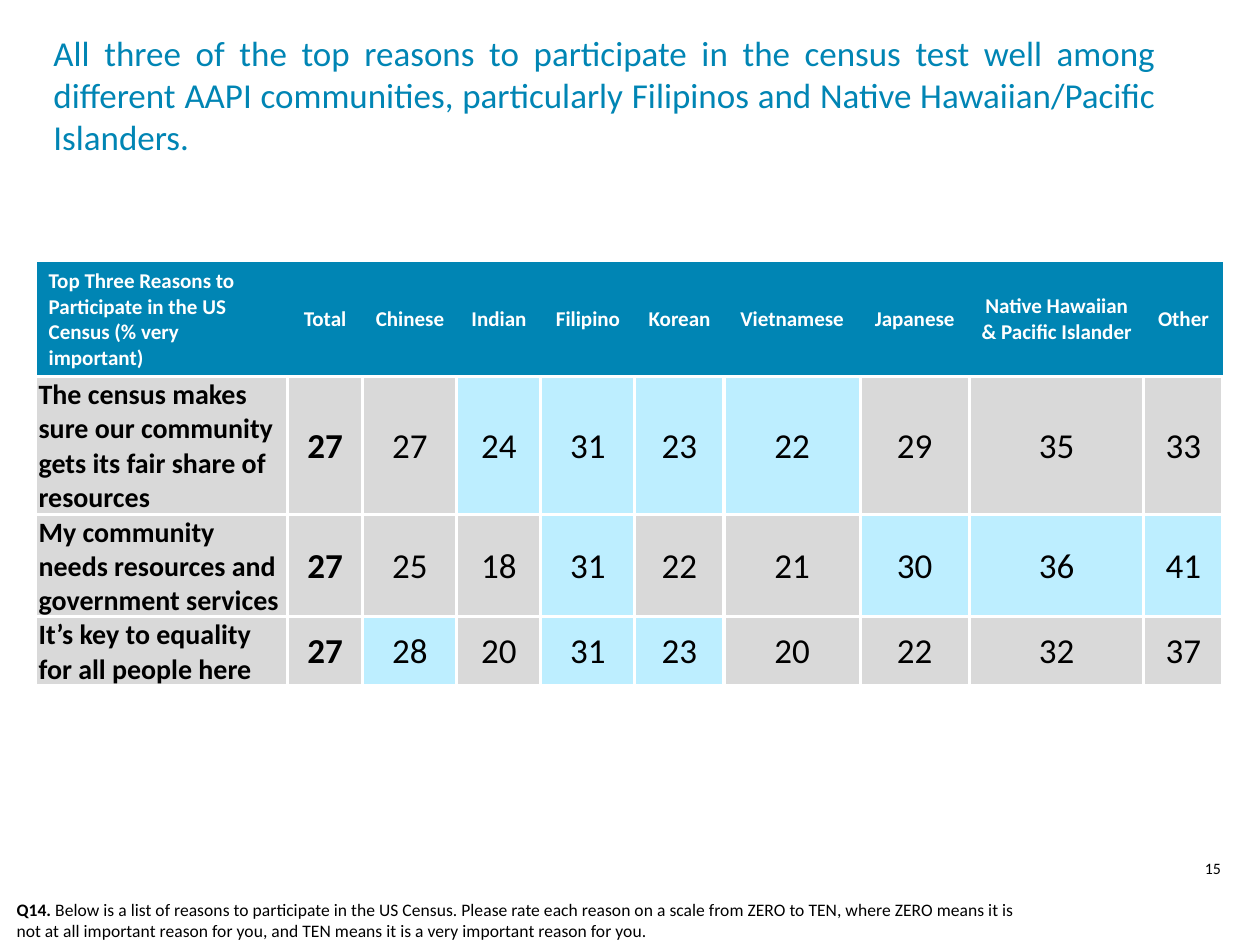
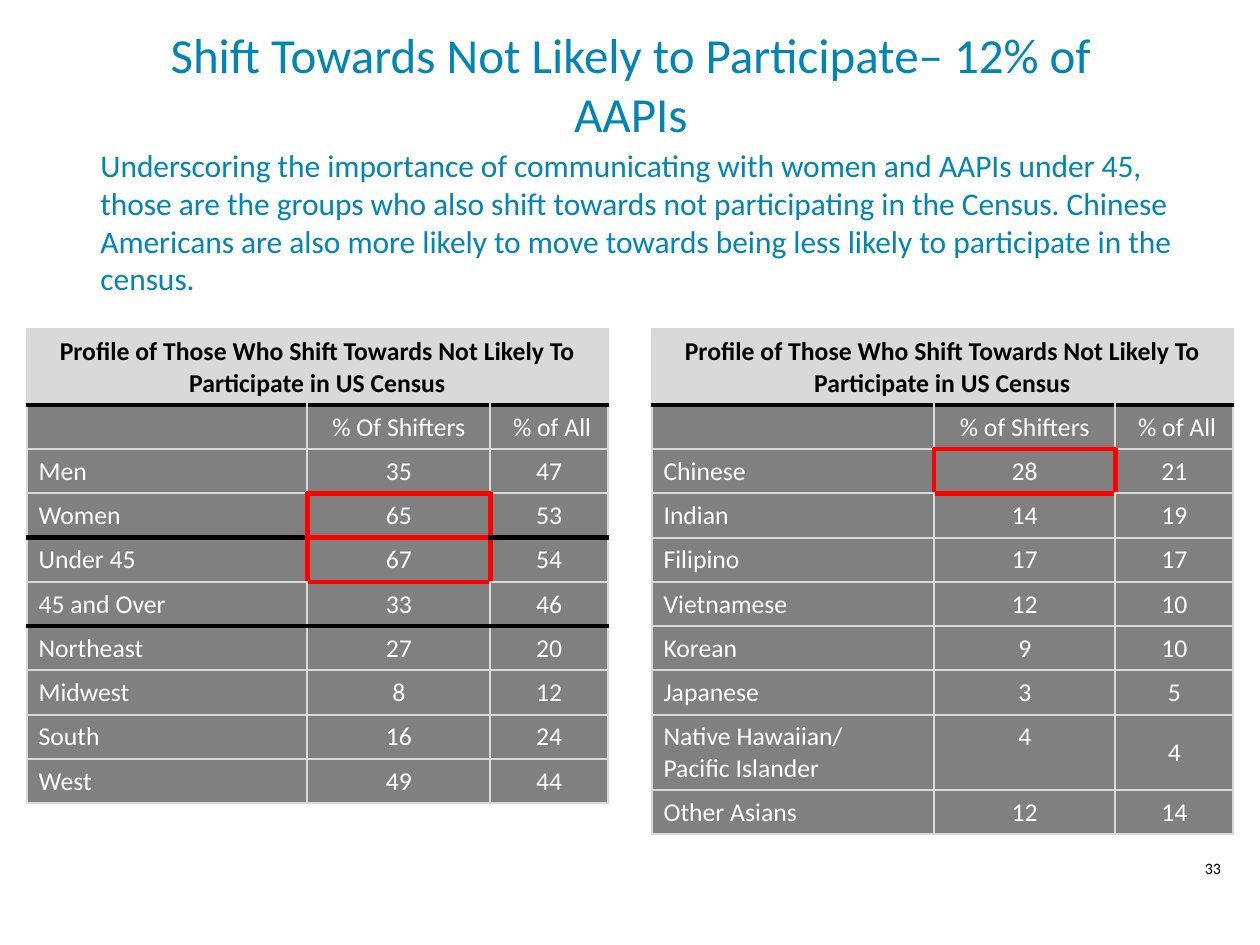
from lxml import etree
from pptx import Presentation
from pptx.dml.color import RGBColor
from pptx.enum.text import MSO_ANCHOR, PP_ALIGN
from pptx.oxml.ns import qn
from pptx.util import Inches, Pt

LEFT, CENTER, JUSTIFY = PP_ALIGN.LEFT, PP_ALIGN.CENTER, PP_ALIGN.JUSTIFY
TOP, MIDDLE, BOTTOM = MSO_ANCHOR.TOP, MSO_ANCHOR.MIDDLE, MSO_ANCHOR.BOTTOM

TEAL = RGBColor(0x00, 0x85, 0xB4)
PALE_BLUE = RGBColor(0xBD, 0xEE, 0xFF)
LIGHT_GRAY = RGBColor(0xD9, 0xD9, 0xD9)
GRAY = RGBColor(0x80, 0x80, 0x80)
RED = RGBColor(0xFF, 0x00, 0x00)
BLACK = RGBColor(0x00, 0x00, 0x00)
WHITE = RGBColor(0xFF, 0xFF, 0xFF)
FONT = "Calibri"

SIDES = {"L": (0, -1), "R": (0, 1), "T": (-1, 0), "B": (1, 0)}
WIDE_INSETS = (0.07, 0.04, 0.07, 0.04)
TIGHT_INSETS = (0.01, 0.01, 0.01, 0)

REASON_HEADS = ["Top Three Reasons to Participate in the US Census (% very important)",
                "Total", "Chinese", "Indian", "Filipino", "Korean", "Vietnamese",
                "Japanese", "Native Hawaiian & Pacific Islander", "Other"]
REASON_COLS = [1.49, 0.45, 0.56, 0.5, 0.56, 0.53, 0.81, 0.65, 1.04, 0.47]
REASONS = [
    ("The census makes sure our community gets its fair share of resources",
     [27, 27, 24, 31, 23, 22, 29, 35, 33], {3, 4, 5, 6}),
    ("My community needs resources and government services",
     [27, 25, 18, 31, 22, 21, 30, 36, 41], {4, 7, 8, 9}),
    ("It’s key to equality for all people here",
     [27, 28, 20, 31, 23, 20, 22, 32, 37], {2, 4, 5}),
]

PROFILE_TITLE = "Profile of Those Who Shift Towards Not Likely To Participate in US Census"
DEMOGRAPHICS = [
    ("", "% Of Shifters", " % of All"),
    ("Men", 35, 47),
    ("Women", 65, 53),
    ("Under 45", 67, 54),
    ("45 and Over", 33, 46),
    ("Northeast", 27, 20),
    ("Midwest", 8, 12),
    ("South", 16, 24),
    ("West", 49, 44),
]
ETHNICITIES = [
    ("", "% of Shifters", " % of All"),
    ("Chinese", 28, 21),
    ("Indian", 14, 19),
    ("Filipino", 17, 17),
    ("Vietnamese", 12, 10),
    ("Korean", 9, 10),
    ("Japanese", 3, 5),
    ("Native Hawaiian/\nPacific Islander", 4, 4),
    ("Other Asians", 12, 14),
]


def add_run(p, text, size, color, bold=False):
    r = p.add_run()
    r.text = text
    r.font.name = FONT
    r.font.size = Pt(size)
    r.font.bold = bold
    r.font.color.rgb = color


def add_text(s, box, runs, size, color, align=LEFT, anchor=TOP):
    tf = s.shapes.add_textbox(*map(Inches, box)).text_frame
    tf.word_wrap = True
    tf.vertical_anchor = anchor
    p = tf.paragraphs[0]
    p.alignment = align
    for text, bold in runs:
        add_run(p, text, size, color, bold)


def add_title(s, box, text, size, align):
    add_text(s, box, [(text, False)], size, TEAL, align, MIDDLE)


def add_page_number(s, number):
    add_text(s, (6.94, 5.06, 0.56, 0.25), [(str(number), False)], 6.8, BLACK, CENTER)


def add_grid(s, left, top, cols, rows):
    frame = s.shapes.add_table(len(rows), len(cols), Inches(left), Inches(top),
                               Inches(sum(cols)), Inches(sum(rows)))
    table = frame.table
    table.first_row = table.horz_banding = False
    for column, width in zip(table.columns, cols):
        column.width = Inches(width)
    for row, height in zip(table.rows, rows):
        row.height = Inches(height)
    return table


def set_border(cell, side, color, width):
    ln = etree.SubElement(cell._tc.get_or_add_tcPr(), qn("a:ln" + side), w=str(Pt(width)))
    if color is None:
        etree.SubElement(ln, qn("a:noFill"))
    else:
        fill = etree.SubElement(ln, qn("a:solidFill"))
        etree.SubElement(fill, qn("a:srgbClr"), val=str(color))


def fill_cell(cell, text, size, color, fill, bold=False, align=LEFT, anchor=TOP,
              insets=WIDE_INSETS):
    cell.fill.solid()
    cell.fill.fore_color.rgb = fill
    cell.vertical_anchor = anchor
    (cell.margin_left, cell.margin_top,
     cell.margin_right, cell.margin_bottom) = map(Inches, insets)
    tf = cell.text_frame
    for i, line in enumerate(str(text).split("\n")):
        p = tf.add_paragraph() if i else tf.paragraphs[0]
        p.alignment = align
        if line:
            add_run(p, line, size, color, bold)
        else:
            etree.SubElement(p._p, qn("a:endParaRPr"), sz=str(size * 100))


def add_reasons_table(s):
    table = add_grid(s, 0.22, 1.56, REASON_COLS, [0.68, 0.82, 0.61, 0.41])
    for c, head in enumerate(REASON_HEADS):
        cell = table.cell(0, c)
        for side in SIDES:
            set_border(cell, side, WHITE if side == "B" else None, 1.5)
        fill_cell(cell, head, 9, WHITE, TEAL, True,
                  CENTER if c else LEFT, MIDDLE if c else BOTTOM)
    for r, (reason, values, highlights) in enumerate(REASONS, 1):
        for c, text in enumerate([reason] + values):
            cell = table.cell(r, c)
            for side in SIDES:
                set_border(cell, side, None if c == 0 and side == "L" else WHITE, 1.5)
            fill_cell(cell, text, 15 if c else 12, BLACK,
                      PALE_BLUE if c in highlights else LIGHT_GRAY, c < 2,
                      CENTER if c else LEFT, MIDDLE, TIGHT_INSETS)


def profile_border(r, c, side, dividers, boxed):
    dr, dc = SIDES[side]
    if boxed & {(r, c), (r + dr, c + dc)}:
        return RED, 2.25
    if dr and min(r, r + dr) in dividers:
        return BLACK, 2.25
    return LIGHT_GRAY, 1


def add_profile_table(s, left, cols, rows, dividers, boxed):
    heights = [0.45] + [0.45 if "\n" in row[0] else 0.26 for row in rows]
    table = add_grid(s, left, 1.96, cols, heights)
    for r in range(len(heights)):
        for c in range(len(cols)):
            for side in SIDES:
                set_border(table.cell(r, c), side,
                           *profile_border(r, c, side, dividers, boxed))
    table.cell(0, 0).merge(table.cell(0, 2))
    fill_cell(table.cell(0, 0), PROFILE_TITLE, 11, BLACK, LIGHT_GRAY, True, CENTER)
    for r, row in enumerate(rows, 1):
        for c, text in enumerate(row):
            fill_cell(table.cell(r, c), text, 11, WHITE, GRAY,
                      align=CENTER if c else LEFT,
                      anchor=MIDDLE if c == 2 and r > 1 else TOP)


def build_reasons_slide(s):
    add_page_number(s, 15)
    add_reasons_table(s)
    add_title(s, (0.22, 0.13, 6.76, 0.87),
              "All three of the top reasons to participate in the census test well among "
              "different AAPI communities, particularly Filipinos and Native "
              "Hawaiian/Pacific Islanders.", 15, JUSTIFY)
    add_text(s, (0, 5.3, 6.21, 0.35),
             [("Q14. ", True),
              ("Below is a list of reasons to participate in the US Census. Please rate "
               "each reason on a scale from ZERO to TEN, where ZERO means it is not at all "
               "important reason for you, and TEN means it is a very important reason for "
               "you.", False)], 7.5, BLACK)


def build_shift_slide(s):
    add_title(s, (0.56, 0.06, 6.39, 0.87),
              "Shift Towards Not Likely to Participate– 12% of AAPIs", 21, CENTER)
    add_page_number(s, 33)
    add_profile_table(s, 0.16, [1.67, 1.09, 0.7], DEMOGRAPHICS, {0, 3, 5}, {(3, 1), (4, 1)})
    add_profile_table(s, 3.88, [1.68, 1.08, 0.7], ETHNICITIES, {0}, {(2, 1)})
    add_text(s, (0.5, 0.82, 6.63, 1.01),
             [("Underscoring the importance of communicating with women and AAPIs under 45, "
               "those are the groups who also shift towards not participating in the Census. "
               "Chinese Americans are also more likely to move towards being less likely to "
               "participate in the census.", False)], 13.5, TEAL)


def main():
    prs = Presentation()
    prs.slide_width = Inches(7.5)
    prs.slide_height = prs.slide_width * 3 // 4
    for build in (build_reasons_slide, build_shift_slide):
        build(prs.slides.add_slide(prs.slide_layouts[6]))
    prs.save("out.pptx")


if __name__ == "__main__":
    main()
